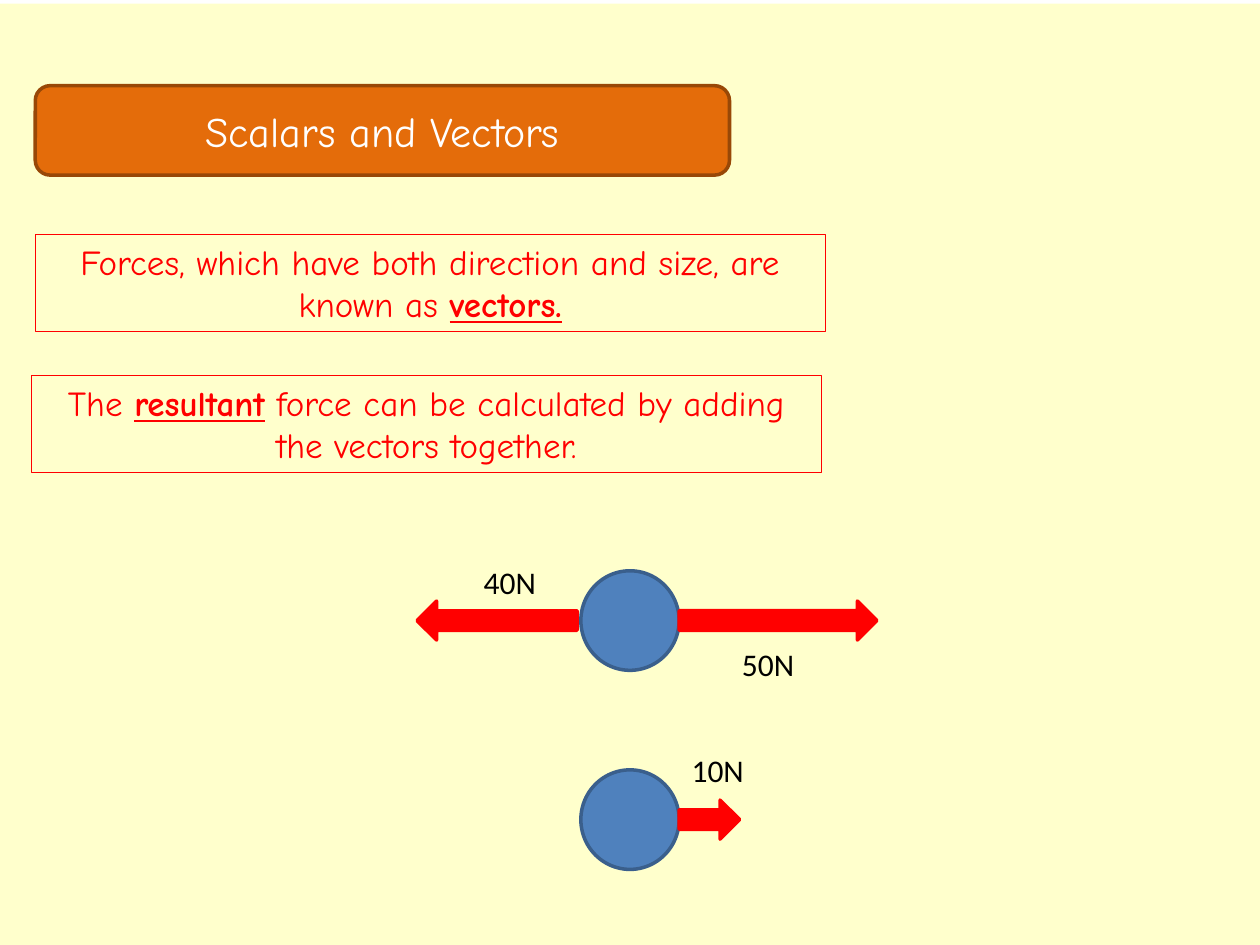
import pptx
import pptx.util
import pptx.dml.color
import pptx.enum.shapes
import pptx.enum.text

SHAPE = pptx.enum.shapes.MSO_SHAPE
ANCHOR = pptx.enum.text.MSO_ANCHOR
ALIGN = pptx.enum.text.PP_ALIGN

COLUMNS, ROWS = 100, 75  # grid cells across and down the slide


def color(hex_string):
    return pptx.dml.color.RGBColor.from_string(hex_string)


def write(shape, spans, size=18, font="Calibri", ink="000000",
          align=ALIGN.LEFT, anchor=ANCHOR.TOP):
    """Fill a shape with one paragraph; spans are (text, emphasized) pairs."""
    frame = shape.text_frame
    frame.word_wrap = True
    frame.vertical_anchor = anchor
    para = frame.paragraphs[0]
    para.alignment = align
    for text, emphasized in spans:
        span = para.add_run()
        span.text = text
        span.font.size = pptx.util.Pt(size)
        span.font.name = font
        span.font.color.rgb = color(ink)
        span.font.bold = span.font.underline = emphasized


class ForceSlide:
    RED, PAPER = "FF0000", "FFFFCC"
    ORANGE, BROWN = "E46C0A", "984807"
    BLUE, NAVY = "4F81BD", "3A5F8C"
    HEADING_FONT = "Comic Neue"
    BALL_LEFT, BALL_WIDTH, BALL_HEIGHT = 46.1, 7.8, 7.9
    ARROW_HEIGHT = 3.1

    def __init__(self, deck):
        self.slide = deck.slides.add_slide(deck.slide_layouts[6])
        self.cell_width = deck.slide_width / COLUMNS
        self.cell_height = deck.slide_height / ROWS

    def place(self, column, row, width, height):
        return (round(column * self.cell_width), round(row * self.cell_height),
                round(width * self.cell_width), round(height * self.cell_height))

    def shape(self, kind, area, fill=None, line=None, weight=2.0):
        shape = self.slide.shapes.add_shape(kind, *self.place(*area))
        shape.shadow.inherit = False
        if fill:
            shape.fill.solid()
            shape.fill.fore_color.rgb = color(fill)
        else:
            shape.fill.background()
        if line:
            shape.line.color.rgb = color(line)
            shape.line.width = pptx.util.Pt(weight)
        else:
            shape.line.fill.background()
        return shape

    def background(self):
        self.shape(SHAPE.RECTANGLE, (0, 0.3, COLUMNS, ROWS - 0.3), self.PAPER)

    def title(self, text):
        banner = self.shape(SHAPE.ROUNDED_RECTANGLE, (2.8, 6.8, 55.1, 7.1),
                            self.ORANGE, self.BROWN)
        write(banner, [(text, False)], size=24, font=self.HEADING_FONT,
              ink="FFFFFF", align=ALIGN.CENTER, anchor=ANCHOR.MIDDLE)

    def statement(self, column, row, spans):
        box = self.shape(SHAPE.RECTANGLE, (column, row, 62.7, 7.7),
                         line=self.RED, weight=0.75)
        write(box, spans, size=20, font=self.HEADING_FONT, ink=self.RED,
              align=ALIGN.CENTER)

    def ball(self, row):
        self.shape(SHAPE.OVAL, (self.BALL_LEFT, row, self.BALL_WIDTH, self.BALL_HEIGHT),
                   self.BLUE, self.NAVY)

    def force(self, ball_row, length, leftward=False):
        """Draw an arrow from the ball's side, level with its centre."""
        row = ball_row + (self.BALL_HEIGHT - self.ARROW_HEIGHT) / 2
        if leftward:
            column = self.BALL_LEFT - 0.3 - length
        else:
            column = self.BALL_LEFT + self.BALL_WIDTH
        arrow = self.shape(SHAPE.RIGHT_ARROW, (column, row, length, self.ARROW_HEIGHT),
                           self.RED, self.RED)
        arrow.rotation = 180 if leftward else 0

    def label(self, column, row, text):
        box = self.slide.shapes.add_textbox(*self.place(column, row, 7.1, 4))
        write(box, [(text, False)])


def main():
    deck = pptx.Presentation()
    deck.slide_width = pptx.util.Inches(10)
    deck.slide_height = pptx.util.Inches(7.5)
    page = ForceSlide(deck)

    # Heading and statements
    page.background()
    page.title("Scalars and Vectors")
    page.statement(2.8, 18.6, [
        ("Forces, which have both direction and size, are known as ", False),
        ("vectors.", True)])
    page.statement(2.5, 29.8, [
        ("The ", False), ("resultant", True),
        (" force can be calculated by adding the vectors together.", False)])

    # Two opposing forces
    opposed_row = 45.3
    page.ball(opposed_row)
    page.force(opposed_row, 12.7, leftward=True)
    page.force(opposed_row, 15.7)
    page.label(37.4, 44.2, "40N")
    page.label(57.9, 50.7, "50N")

    # Their resultant
    resultant_row = 61.1
    page.ball(resultant_row)
    page.force(resultant_row, 4.8)
    page.label(53.9, 59.1, "10N")

    deck.save("out.pptx")


if __name__ == "__main__":
    main()
